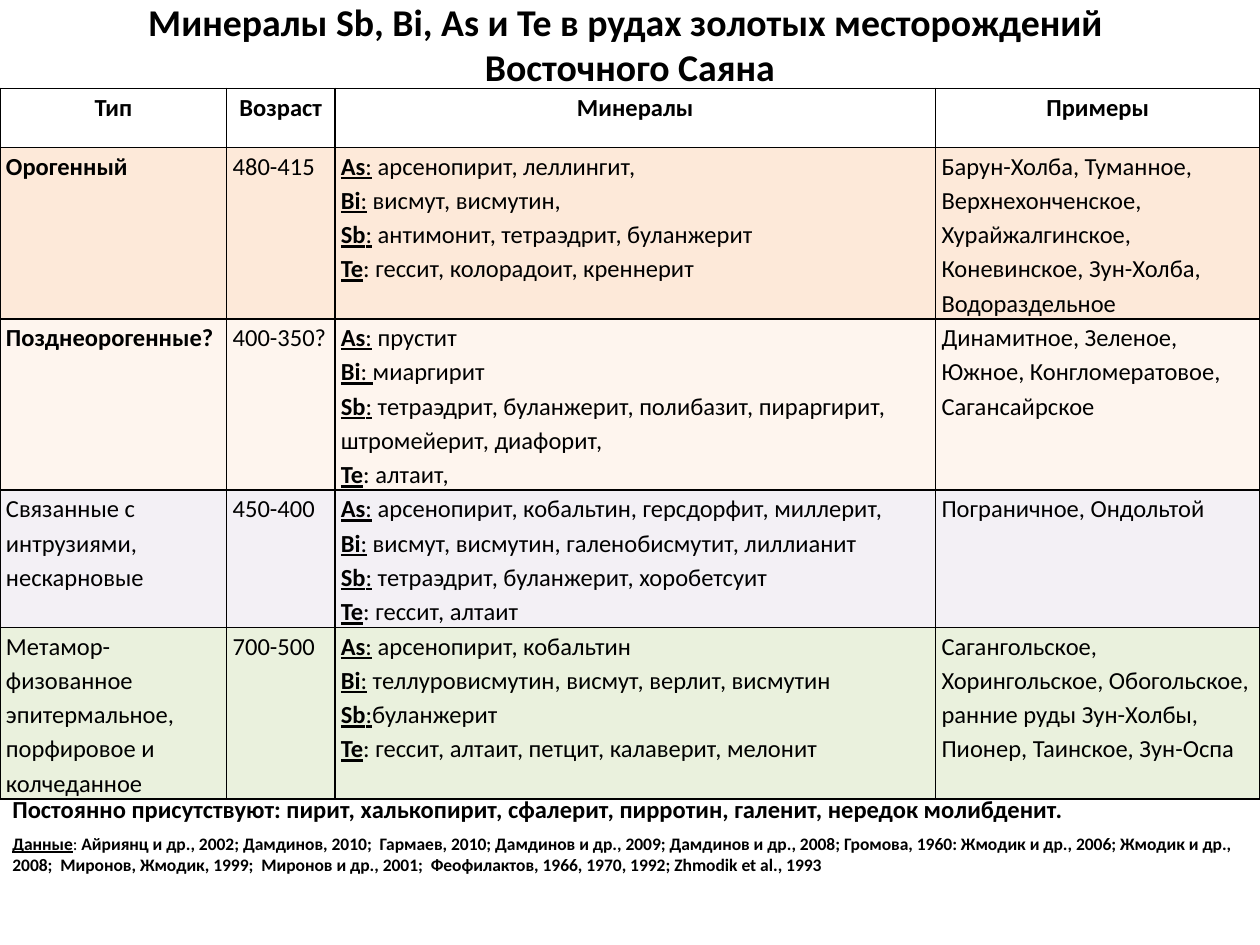
from lxml.etree import SubElement
from pptx import Presentation
from pptx.dml.color import RGBColor
from pptx.enum.text import MSO_ANCHOR, PP_ALIGN
from pptx.oxml.ns import qn
from pptx.util import Cm, Pt

FONT = "Calibri"
COLORS = {
    "text": "000000",
    "border": "000000",
    "orogenic": "FCD5B5",
    "late": "FDEADA",
    "intrusive": "E6E0EC",
    "metamorphic": "D7E4BD",
}
COLUMN_WIDTHS = [4.57, 2.18, 12.11, 6.54]
HEADER_HEIGHT = 1.19
HEADERS = ["Тип", "Возраст", "Минералы", "Примеры"]
DEPOSITS = [
    {
        "type": "Орогенный", "bold": True, "age": "480-415",
        "color": "orogenic", "opacity": 51, "height": 3.35,
        "minerals": [
            ("As", ":", " арсенопирит, леллингит,"),
            ("Bi", ":", " висмут, висмутин,"),
            ("Sb", ":", " антимонит, тетраэдрит, буланжерит"),
            ("Te", "", ": гессит, колорадоит, креннерит"),
        ],
        "examples": "Барун-Холба, Туманное,  Верхнехонченское, Хурайжалгинское, "
                    "Коневинское, Зун-Холба, Водораздельное",
    },
    {
        "type": "Позднеорогенные?", "bold": True, "age": "400-350?",
        "color": "late", "opacity": 46, "height": 2.24,
        "minerals": [
            ("As", ":", " прустит"),
            ("Bi", ": ", "миаргирит"),
            ("Sb", ":", " тетраэдрит, буланжерит, полибазит, пираргирит, "
                        "штромейерит, диафорит,"),
            ("Te", "", ": алтаит,"),
        ],
        "examples": "Динамитное, Зеленое, Южное, Конгломератовое, Сагансайрское",
    },
    {
        "type": "Связанные с интрузиями, нескарновые", "bold": False, "age": "450-400",
        "color": "intrusive", "opacity": 48, "height": 2.54,
        "minerals": [
            ("As", ":", " арсенопирит, кобальтин, герсдорфит, миллерит,"),
            ("Bi", ":", " висмут, висмутин, галенобисмутит, лиллианит"),
            ("Sb", ":", " тетраэдрит, буланжерит, хоробетсуит"),
            ("Te", "", ": гессит, алтаит"),
        ],
        "examples": "Пограничное, Ондольтой",
    },
    {
        "type": "Метамор-физованное эпитермальное, порфировое и колчеданное",
        "bold": False, "age": "700-500",
        "color": "metamorphic", "opacity": 51, "height": 2.24,
        "minerals": [
            ("As", ":", " арсенопирит, кобальтин"),
            ("Bi", ":", " теллуровисмутин, висмут, верлит, висмутин"),
            ("Sb", ":", "буланжерит"),
            ("Te", "", ": гессит, алтаит, петцит, калаверит, мелонит"),
        ],
        "examples": "Сагангольское, Хорингольское, Обогольское, ранние руды "
                    "Зун-Холбы, Пионер, Таинское, Зун-Оспа",
    },
]
SOURCES = (
    "Айриянц и др., 2002; Дамдинов, 2010;  Гармаев, 2010; Дамдинов и др., 2009; "
    "Дамдинов и др., 2008; Громова, 1960: Жмодик и др., 2006; Жмодик и др., 2008;  "
    "Миронов, Жмодик, 1999;  Миронов и др., 2001;  Феофилактов, 1966, 1970, 1992; "
    "Zhmodik et al., 1993"
)


def set_font(font, size, bold=None):
    font.name = FONT
    font.size = Pt(size)
    font.bold = bold
    font.color.rgb = RGBColor.from_string(COLORS["text"])


def add_run(paragraph, text, size, bold=False, underline=False):
    run = paragraph.add_run()
    run.text = text
    set_font(run.font, size, bold)
    run.font.underline = underline


def add_title(slide):
    title = slide.shapes.title
    title.left, title.top, title.width, title.height = Cm(0), Cm(0), Cm(25.4), Cm(1.78)
    title.text_frame.vertical_anchor = MSO_ANCHOR.MIDDLE
    paragraph = title.text_frame.paragraphs[0]
    paragraph.text = "Минералы Sb, Bi, As и Te в рудах золотых месторождений \vВосточного Саяна"
    paragraph.alignment = PP_ALIGN.CENTER
    set_font(paragraph.font, 21.6, True)


def add_note(slide, top, height):
    box = slide.shapes.add_textbox(Cm(0), Cm(top), Cm(25.4), Cm(height))
    box.text_frame.word_wrap = True
    return box.text_frame.paragraphs[0]


def format_cell(cell):
    cell.margin_left = cell.margin_right = Cm(0.12)
    cell.margin_top = cell.margin_bottom = Cm(0)
    properties = cell._tc.get_or_add_tcPr()
    for side in ("a:lnL", "a:lnR", "a:lnT", "a:lnB"):
        line = SubElement(properties, qn(side), w=str(Pt(1)))
        fill = SubElement(line, qn("a:solidFill"))
        SubElement(fill, qn("a:srgbClr"), val=COLORS["border"])
    cell.fill.background()


def tint_cell(cell, color, opacity):
    cell.fill.solid()
    cell.fill.fore_color.rgb = RGBColor.from_string(COLORS[color])
    tint = cell._tc.tcPr.find(qn("a:solidFill")).find(qn("a:srgbClr"))
    SubElement(tint, qn("a:alpha"), val=str(opacity * 1000))


def write_cell(cell, text, bold=False, alignment=PP_ALIGN.LEFT):
    paragraph = cell.text_frame.paragraphs[0]
    paragraph.text = text
    paragraph.alignment = alignment
    paragraph.line_spacing = 1.15
    set_font(paragraph.font, 14, bold)


def write_minerals(cell, minerals):
    frame = cell.text_frame
    for index, (element, mark, names) in enumerate(minerals):
        paragraph = frame.add_paragraph() if index else frame.paragraphs[0]
        paragraph.line_spacing = 1.15
        add_run(paragraph, element, 14, bold=True, underline=True)
        if mark:
            add_run(paragraph, mark, 14, underline=True)
        add_run(paragraph, names, 14)


def add_deposit_table(slide):
    heights = [HEADER_HEIGHT] + [deposit["height"] for deposit in DEPOSITS]
    table = slide.shapes.add_table(
        len(heights), len(HEADERS), Cm(0), Cm(1.78), Cm(25.4), Cm(sum(heights))
    ).table
    table.first_row = table.horz_banding = False
    for column, width in zip(table.columns, COLUMN_WIDTHS):
        column.width = Cm(width)
    for row, height in zip(table.rows, heights):
        row.height = Cm(height)
    for cell in table.iter_cells():
        format_cell(cell)
    for cell, header in zip(table.rows[0].cells, HEADERS):
        write_cell(cell, header, True, PP_ALIGN.CENTER)
    for index, deposit in enumerate(DEPOSITS, start=1):
        cells = list(table.rows[index].cells)
        for cell in cells:
            tint_cell(cell, deposit["color"], deposit["opacity"])
        write_cell(cells[0], deposit["type"], deposit["bold"])
        write_cell(cells[1], deposit["age"])
        write_minerals(cells[2], deposit["minerals"])
        write_cell(cells[3], deposit["examples"])


def main():
    presentation = Presentation()
    presentation.slide_width = Cm(25.4)
    presentation.slide_height = Cm(19.05)
    slide = presentation.slides.add_slide(presentation.slide_layouts[5])
    add_title(slide)
    add_deposit_table(slide)

    common = add_note(slide, 15.88, 0.86)
    common.text = ("Постоянно присутствуют: пирит, халькопирит, сфалерит, "
                   "пирротин, галенит, нередок молибденит.")
    set_font(common.font, 14, True)

    sources = add_note(slide, 16.66, 1.12)
    add_run(sources, "Данные", 10, bold=True, underline=True)
    add_run(sources, ": ", 10)
    add_run(sources, SOURCES, 10, bold=True)
    presentation.save("out.pptx")


if __name__ == "__main__":
    main()
